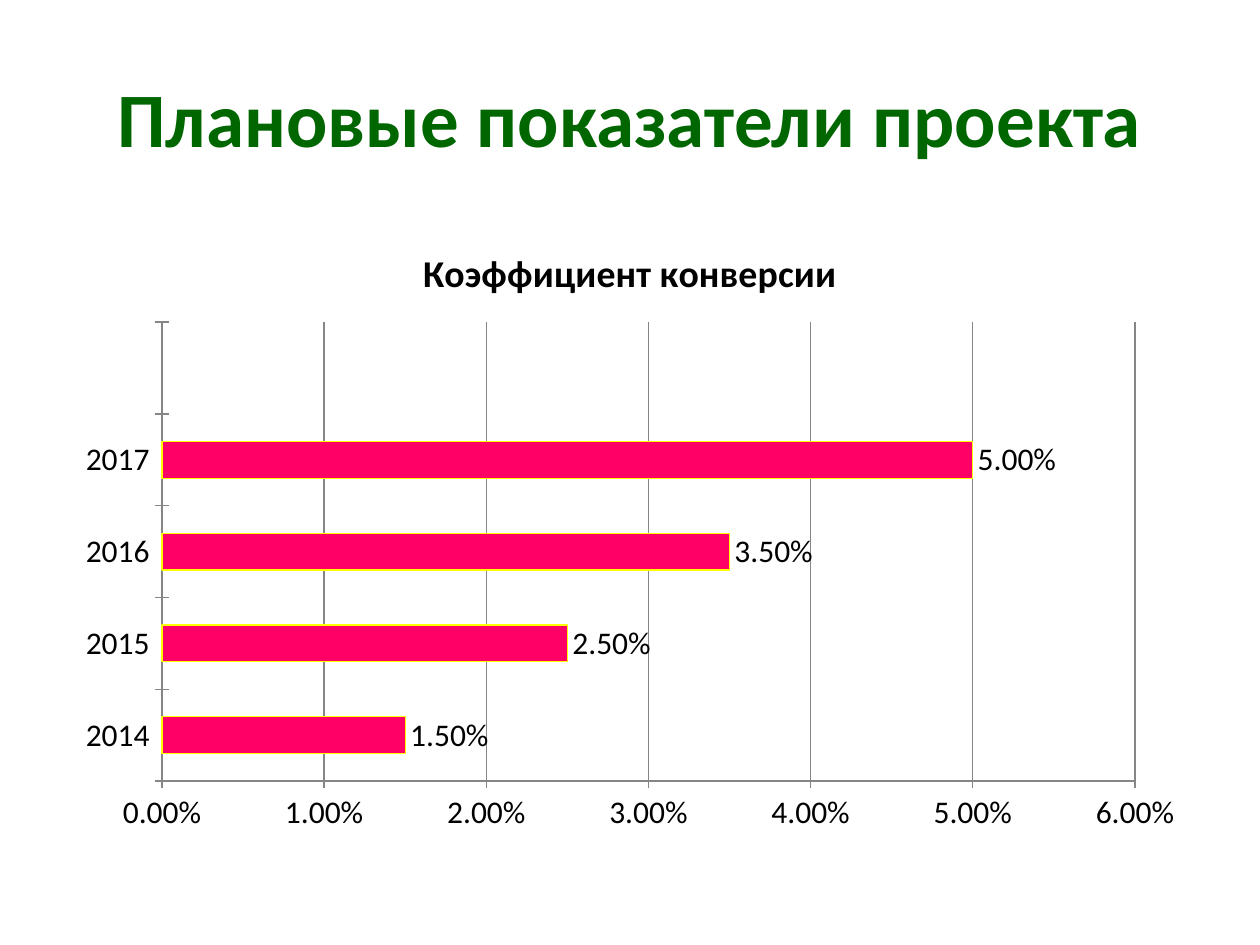
from typing import NamedTuple, Optional

from lxml import etree
from pptx import Presentation
from pptx import util as u
from pptx.chart import data as chart_data
from pptx.dml import color
from pptx.enum import chart as ch, text
from pptx.oxml import ns

FONT = "Calibri"
BLACK, GREEN, PINK, YELLOW, GREY = "000000", "006600", "FF0066", "FFFF00", "868686"
PERCENT = "0.00%"
INDICATOR = "Коэффициент конверсии"


class Target(NamedTuple):
    year: str
    conversion: Optional[float]


TARGETS = [
    Target("2014", 0.015),
    Target("2015", 0.025),
    Target("2016", 0.035),
    Target("2017", 0.05),
    Target("", None),
]


def rgb(value: str) -> color.RGBColor:
    return color.RGBColor.from_string(value)


def style_font(font, size: float, hue: str = BLACK, bold: bool = False) -> None:
    font.name = FONT
    font.size = u.Pt(size)
    font.bold = bold
    font.color.rgb = rgb(hue)


def style_line(line, hue: str) -> None:
    line.color.rgb = rgb(hue)
    line.width = u.Pt(0.75)


def write(frame, content: str, *, size: float, hue: str = BLACK, bold: bool = True) -> None:
    paragraph = frame.paragraphs[0]
    paragraph.alignment = text.PP_ALIGN.CENTER
    run = paragraph.add_run()
    run.text = content
    style_font(run.font, size, hue, bold)


def style_axis(axis) -> None:
    axis.major_tick_mark = ch.XL_TICK_MARK.CROSS
    axis.minor_tick_mark = ch.XL_TICK_MARK.NONE
    style_font(axis.tick_labels.font, 18)
    style_line(axis.format.line, GREY)


def place_plot(chart, **fractions: float) -> None:
    plot_area = chart.plots[0]._element.getparent()
    for old in plot_area.findall(ns.qn("c:layout")):
        plot_area.remove(old)
    layout = etree.Element(ns.qn("c:layout"))
    manual = etree.SubElement(layout, ns.qn("c:manualLayout"))
    settings = {"layoutTarget": "inner", "xMode": "edge", "yMode": "edge", **fractions}
    for tag, value in settings.items():
        etree.SubElement(manual, ns.qn(f"c:{tag}")).set("val", str(value))
    plot_area.insert(0, layout)


def add_heading(slide) -> None:
    heading = slide.shapes.add_textbox(u.Pt(36), u.Pt(21.6), u.Pt(648), u.Pt(90))
    frame = heading.text_frame
    frame.word_wrap = True
    frame.vertical_anchor = text.MSO_ANCHOR.MIDDLE
    write(frame, "Плановые показатели проекта", size=44, hue=GREEN)


def add_conversion_chart(slide) -> None:
    figures = chart_data.CategoryChartData(number_format=PERCENT)
    figures.categories = [target.year for target in TARGETS]
    figures.add_series(INDICATOR, [target.conversion for target in TARGETS])
    chart = slide.shapes.add_chart(
        ch.XL_CHART_TYPE.BAR_CLUSTERED,
        u.Pt(36), u.Pt(126), u.Pt(648), u.Pt(356.4), figures,
    ).chart
    style_font(chart.font, 18)
    chart.has_legend = False
    chart.has_title = True
    write(chart.chart_title.text_frame, INDICATOR, size=21.6)
    chart.chart_title.include_in_layout = False

    years, rates = chart.category_axis, chart.value_axis
    style_axis(years)
    style_axis(rates)
    rates.minimum_scale, rates.maximum_scale, rates.major_unit = 0, 0.06, 0.01
    rates.tick_labels.number_format = PERCENT
    rates.tick_labels.number_format_is_linked = False
    rates.has_major_gridlines = True
    style_line(rates.major_gridlines.format.line, GREY)

    plot = chart.plots[0]
    plot.gap_width = 150
    plot.vary_by_categories = False
    conversion = plot.series[0]
    conversion.format.fill.solid()
    conversion.format.fill.fore_color.rgb = rgb(PINK)
    style_line(conversion.format.line, YELLOW)
    labels = conversion.data_labels
    labels.show_value = True
    labels.number_format = PERCENT
    labels.number_format_is_linked = False
    labels.position = ch.XL_LABEL_POSITION.OUTSIDE_END
    style_font(labels.font, 18)
    place_plot(chart, x=0.0873, y=0.163, w=0.858, h=0.736)


def main() -> None:
    deck = Presentation()
    deck.slide_width, deck.slide_height = u.Pt(720), u.Pt(540)
    slide = deck.slides.add_slide(deck.slide_layouts[6])
    add_heading(slide)
    add_conversion_chart(slide)
    deck.save("out.pptx")


if __name__ == "__main__":
    main()
